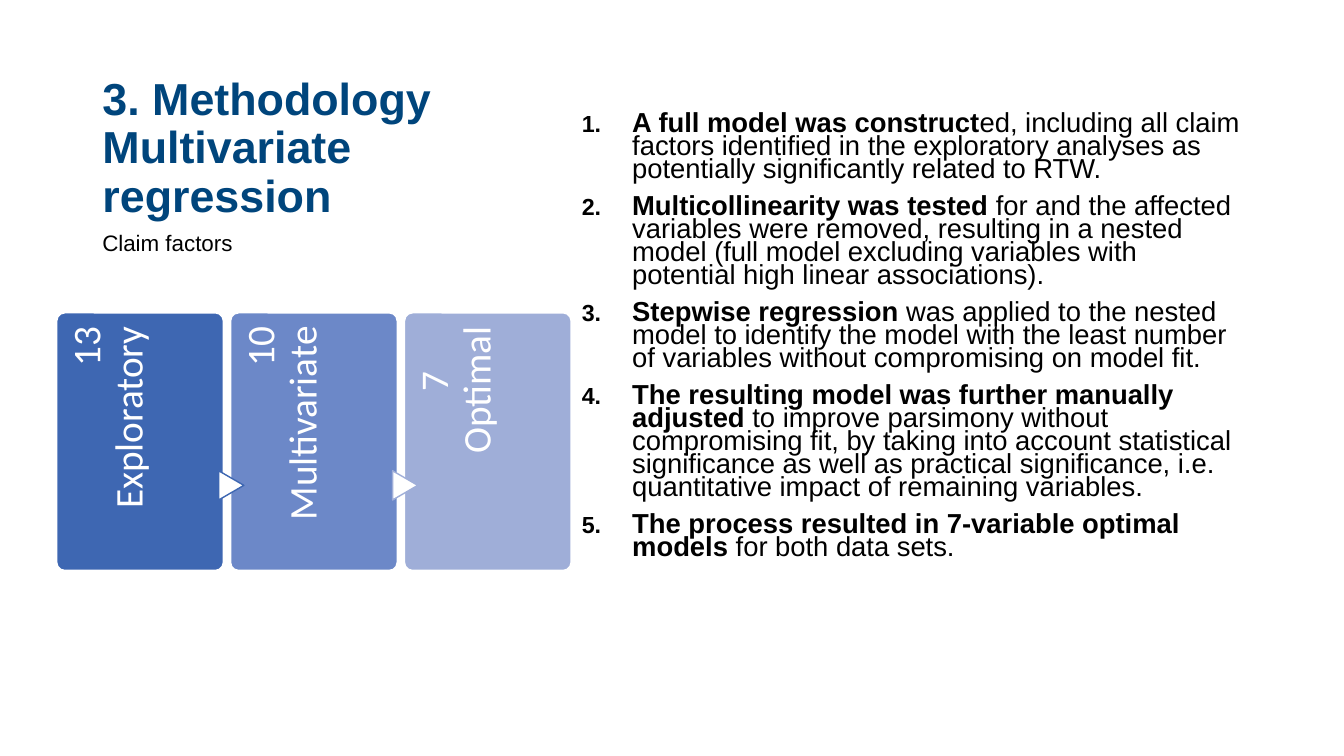
from lxml.etree import SubElement
from pptx import Presentation
from pptx.dml.color import RGBColor
from pptx.enum.shapes import MSO_SHAPE
from pptx.enum.text import MSO_ANCHOR, MSO_AUTO_SIZE, PP_ALIGN
from pptx.oxml.ns import qn
from pptx.util import Pt

NAVY = RGBColor(0x00, 0x45, 0x7C)
BLACK = RGBColor(0x00, 0x00, 0x00)
WHITE = RGBColor(0xFF, 0xFF, 0xFF)
DEEP = RGBColor(0x3E, 0x67, 0xB2)
MID = RGBColor(0x6C, 0x88, 0xC8)
PALE = RGBColor(0x9F, 0xAE, 0xD8)

# Bold lead and plain rest of each step
STEPS = [
    ("A full model was construct",
     "ed, including all claim factors identified in the exploratory analyses "
     "as potentially significantly related to RTW."),
    ("Multicollinearity was tested",
     " for and the affected variables were removed, resulting in a nested model "
     "(full model excluding variables with potential high linear associations)."),
    ("Stepwise regression ",
     "was applied to the nested model to identify the model with the least "
     "number of variables without compromising on model fit."),
    ("The resulting model was further manually adjusted",
     " to improve parsimony without compromising fit, by taking into account "
     "statistical significance as well as practical significance, i.e. "
     "quantitative impact of remaining variables."),
    ("The process resulted in 7-variable optimal models ",
     "for both data sets."),
]

# Count, label, fill, indent of the count
CARDS = [
    ("13", "Exploratory", DEEP, 0),
    ("10", "Multivariate", MID, 0),
    ("7", "Optimal", PALE, 95),
]
CARD_X, CARD_Y, CARD_W, CARD_H, STEP = 40.3, 223.2, 119.5, 184.5, 124.2
LABEL_W, LABEL_H = 151.5, 24
ARROW_W, ARROW_H, ARROW_Y = 20.9, 18, 346.7


def write(par, text, size=16, color=BLACK, bold=False, font="Arial"):
    run = par.add_run()
    run.text = text
    run.font.name = font
    run.font.size = Pt(size)
    run.font.bold = bold
    run.font.color.rgb = color


def number(par, indent):
    """Turn a paragraph into an item of a numbered list."""
    props = par._p.get_or_add_pPr()
    props.set("marL", str(Pt(indent)))
    props.set("indent", str(-Pt(indent)))
    SubElement(props, qn("a:buSzPct"), val="85000")
    SubElement(props, qn("a:buFont"), typeface="+mj-lt")
    SubElement(props, qn("a:buAutoNum"), type="arabicPeriod")


class Page:
    """The current slide and the style of its elements."""

    def __init__(self, deck):
        self.slide = deck.slides.add_slide(deck.slide_layouts[5])
        self.shapes = self.slide.shapes

    def title(self, text, x, y, w, h):
        box = self.shapes.title
        box.left, box.top, box.width, box.height = Pt(x), Pt(y), Pt(w), Pt(h)
        frame = box.text_frame
        frame.word_wrap = True
        frame.auto_size = MSO_AUTO_SIZE.NONE
        frame.vertical_anchor = MSO_ANCHOR.BOTTOM
        par = frame.paragraphs[0]
        par.alignment = PP_ALIGN.LEFT
        par.line_spacing = 0.9
        for place, line in enumerate(text.split("\n")):
            if place:
                par.add_line_break()
            write(par, line, size=32, color=NAVY, bold=True)

    def box(self, x, y, w, h):
        box = self.shapes.add_textbox(Pt(x), Pt(y), Pt(w), Pt(h))
        box.text_frame.word_wrap = True
        return box

    def note(self, text, x, y, w, h):
        par = self.box(x, y, w, h).text_frame.paragraphs[0]
        par.line_spacing = 0.9
        write(par, text)

    def steps(self, items, x, y, w, h):
        frame = self.box(x, y, w, h).text_frame
        for place, (lead, rest) in enumerate(items):
            par = frame.add_paragraph() if place else frame.paragraphs[0]
            par.line_spacing = 0.7
            par.space_before = Pt(10 if place else 0)
            number(par, 36)
            write(par, lead, size=19.6, bold=True)
            write(par, rest, size=19.6)

    def shape(self, kind, x, y, w, h, fill, line, weight):
        shape = self.shapes.add_shape(kind, Pt(x), Pt(y), Pt(w), Pt(h))
        shape.shadow.inherit = False
        shape.fill.solid()
        shape.fill.fore_color.rgb = fill
        shape.line.color.rgb = line
        shape.line.width = Pt(weight)
        return shape

    def card(self, x, count, label, fill, indent):
        card = self.shape(MSO_SHAPE.ROUNDED_RECTANGLE, x, CARD_Y, CARD_W, CARD_H,
                          fill, WHITE, 1.5)
        card.adjustments[0] = 0.05
        # The upright label runs down the left edge from the top of the card
        box = self.box(x + (LABEL_H - LABEL_W) / 2,
                       CARD_Y + (LABEL_W - LABEL_H) / 2, LABEL_W, LABEL_H)
        box.rotation = 270
        frame = box.text_frame
        frame.margin_left = frame.margin_bottom = 0
        frame.margin_top, frame.margin_right = Pt(7.2), Pt(10)
        top, low = frame.paragraphs[0], frame.add_paragraph()
        for par, text in ((top, count), (low, label)):
            par.alignment = PP_ALIGN.RIGHT
            par.line_spacing = 0.9
            write(par, text, size=28, color=WHITE, font="Calibri")
        if indent:
            top.alignment = PP_ALIGN.LEFT
            top._p.get_or_add_pPr().set("marL", str(Pt(indent)))

    def arrow(self, mid, line):
        arrow = self.shape(MSO_SHAPE.FLOWCHART_EXTRACT, mid - ARROW_W / 2,
                           ARROW_Y - ARROW_H / 2, ARROW_W, ARROW_H, WHITE, line, 1)
        arrow.rotation = 90


def main():
    deck = Presentation()
    deck.slide_width, deck.slide_height = Pt(960), Pt(540)
    page = Page(deck)
    page.title("3. Methodology\nMultivariate regression", 66, 36, 309.6, 126)
    page.steps(STEPS, 408.5, 78, 486, 384)
    page.note("Claim factors", 66, 162, 309.6, 300)
    for place, card in enumerate(CARDS):
        page.card(CARD_X + place * STEP, *card)
    for place, line in enumerate((DEEP, PALE)):
        page.arrow(165.2 + place * STEP, line)
    deck.save("out.pptx")


if __name__ == "__main__":
    main()
